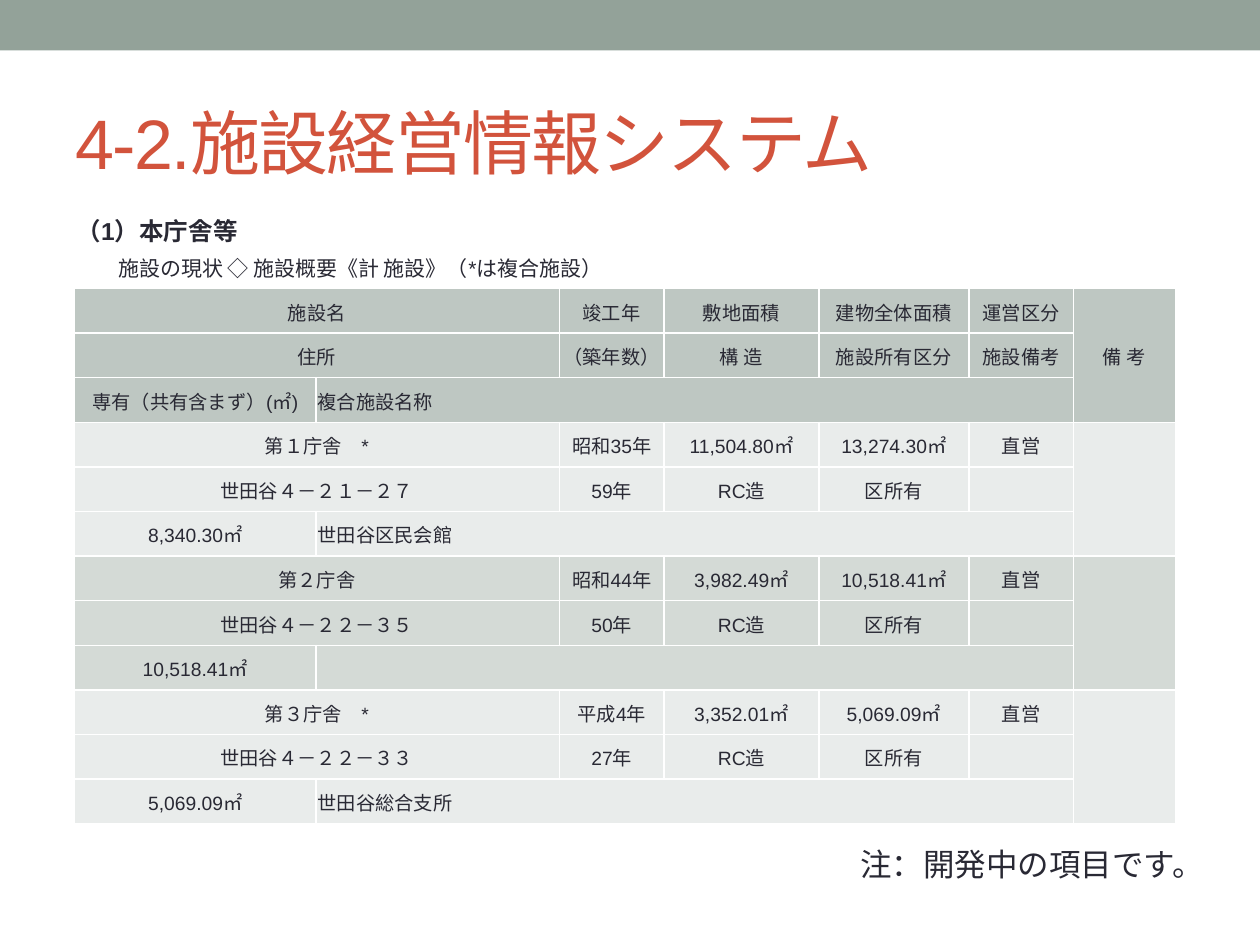
from lxml.etree import SubElement as Sub
from pptx import Presentation
from pptx.dml.color import RGBColor as RGB
from pptx.enum.shapes import MSO_SHAPE as Kind
from pptx.enum.text import MSO_ANCHOR as Anchor, PP_ALIGN as Align
from pptx.oxml.ns import qn
from pptx.util import Inches, Pt

BLOCKS = [
    ("BEC7C2",
     ["施設名", "竣工年", "敷地面積", "建物全体面積", "運営区分", "備 考"],
     ["住所", "（築年数）", "構 造", "施設所有区分", "施設備考"],
     ["専有（共有含まず）(㎡)", "複合施設名称"]),
    ("E9ECEB",
     ["第１庁舎　*", "昭和35年", "11,504.80㎡", "13,274.30㎡", "直営", ""],
     ["世田谷４－２１－２７", "59年", "RC造", "区所有", ""],
     ["8,340.30㎡", "世田谷区民会館"]),
    ("D4DAD6",
     ["第２庁舎", "昭和44年", "3,982.49㎡", "10,518.41㎡", "直営", ""],
     ["世田谷４－２２－３５", "50年", "RC造", "区所有", ""],
     ["10,518.41㎡", ""]),
    ("E9ECEB",
     ["第３庁舎　*", "平成4年", "3,352.01㎡", "5,069.09㎡", "直営", ""],
     ["世田谷４－２２－３３", "27年", "RC造", "区所有", ""],
     ["5,069.09㎡", "世田谷総合支所"]),
]
WIDTHS = [1.92, 1.93, 0.83, 1.23, 1.19, 0.83, 0.81]


def paint(code):
    return RGB.from_string(code)


def write(para, text, size=11, color="292934", font="Arial", bold=False,
          align=Align.LEFT, line=None, indent=0, track=0):
    para.alignment = align
    if line:
        para.line_spacing = Pt(line)
    if indent:
        props = para._p.get_or_add_pPr()
        props.set("marL", str(Inches(indent)))
        props.set("indent", "0")
    if not text:
        return
    run = para.add_run()
    run.text = text
    run.font.size = Pt(size)
    run.font.name = font
    run.font.bold = bold
    run.font.color.rgb = paint(color)
    if track:
        run._r.get_or_add_rPr().set("spc", str(track * 100))


class Deck:
    accent = "D2533C"
    band = "93A299"
    edge = "FFFFFF"

    def __init__(self):
        self.file = Presentation()
        self.file.slide_width = Inches(10)
        self.file.slide_height = Inches(7.5)
        self.slide = self.file.slides.add_slide(self.file.slide_layouts[6])

    def bar(self, *place):
        shape = self.slide.shapes.add_shape(Kind.RECTANGLE, *map(Inches, place))
        shape.shadow.inherit = False
        shape.fill.solid()
        shape.fill.fore_color.rgb = paint(self.band)
        shape.line.fill.background()

    def text(self, place, lines, anchor=Anchor.TOP):
        frame = self.slide.shapes.add_textbox(*map(Inches, place)).text_frame
        frame.word_wrap = True
        frame.vertical_anchor = anchor
        for i, (text, style) in enumerate(lines):
            para = frame.add_paragraph() if i else frame.paragraphs[0]
            write(para, text, **style)

    def cell(self, cell, fill):
        cell.fill.solid()
        cell.fill.fore_color.rgb = paint(fill)
        cell.vertical_anchor = Anchor.MIDDLE
        cell.margin_left = cell.margin_right = cell.margin_top = Inches(0.01)
        cell.margin_bottom = 0
        props = cell._tc.get_or_add_tcPr()
        for i, side in enumerate(("lnL", "lnR", "lnT", "lnB")):
            line = Sub(props, qn("a:" + side), w=str(Pt(1)))
            Sub(Sub(line, qn("a:solidFill")), qn("a:srgbClr"), val=self.edge)
            props.insert(i, line)

    def table(self, place, widths, blocks):
        rows = 3 * len(blocks)
        grid = self.slide.shapes.add_table(
            rows, len(widths), *map(Inches, place)).table
        grid.first_row = grid.horz_banding = False
        for col, width in zip(grid.columns, widths):
            col.width = Inches(width)
        for i, (fill, *group) in enumerate(blocks):
            top = 3 * i
            for row in range(top, top + 3):
                for col in range(len(widths)):
                    self.cell(grid.cell(row, col), fill)
            for row in (top, top + 1):
                grid.cell(row, 0).merge(grid.cell(row, 1))
            grid.cell(top + 2, 1).merge(grid.cell(top + 2, 5))
            grid.cell(top, 6).merge(grid.cell(top + 2, 6))
            for j, (texts, cols) in enumerate(
                    zip(group, ([0, 2, 3, 4, 5, 6], [0, 2, 3, 4, 5], [0, 1]))):
                for text, col in zip(texts, cols):
                    align = Align.LEFT if col == 1 else Align.CENTER
                    para = grid.cell(top + j, col).text_frame.paragraphs[0]
                    write(para, text, align=align)


def main():
    deck = Deck()
    deck.bar(0, 0, 10, 0.4)
    deck.text((0.5, 0.58, 9, 1.08),
              [("4-2.施設経営情報システム",
                dict(size=40, color=deck.accent, track=-1))], Anchor.MIDDLE)
    deck.text((0.51, 1.62, 4.75, 0.66),
              [("（1）本庁舎等", dict(size=14, bold=True, line=20)),
               ("施設の現状 ◇ 施設概要《計 施設》（*は複合施設）",
                dict(size=12, line=20, indent=0.33))], Anchor.MIDDLE)
    deck.table((0.59, 2.29, 8.74, 4.25), WIDTHS, BLOCKS)
    deck.text((6.73, 6.66, 2.83, 0.4),
              [("注：開発中の項目です。", dict(size=18))])
    deck.file.save("out.pptx")


if __name__ == "__main__":
    main()
